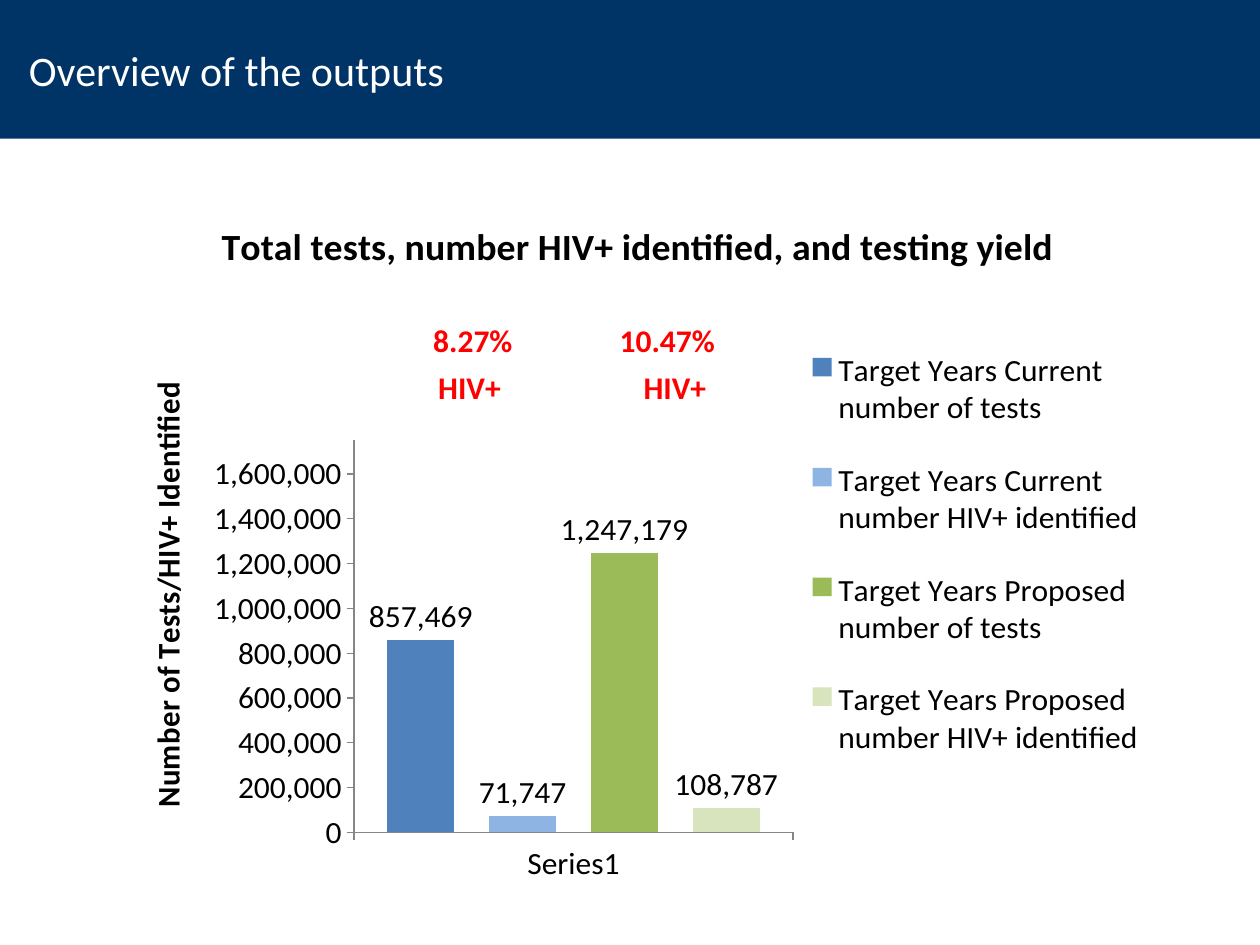
"""Build the slide that compares HIV tests, cases found and testing yield."""
from dataclasses import dataclass

from lxml import etree
from pptx import Presentation
from pptx.chart.data import CategoryChartData
from pptx.dml.color import RGBColor
from pptx.enum.chart import XL_CHART_TYPE, XL_LABEL_POSITION, XL_LEGEND_POSITION, XL_TICK_MARK
from pptx.enum.text import MSO_ANCHOR, MSO_AUTO_SIZE, PP_ALIGN
from pptx.util import Inches, Pt

COLUMN = XL_CHART_TYPE.COLUMN_CLUSTERED
ABOVE = XL_LABEL_POSITION.OUTSIDE_END
RIGHT = XL_LEGEND_POSITION.RIGHT
OUT, NONE = XL_TICK_MARK.OUTSIDE, XL_TICK_MARK.NONE
MIDDLE, LEFT, FIXED = MSO_ANCHOR.MIDDLE, PP_ALIGN.LEFT, MSO_AUTO_SIZE.NONE

HEAD = "Overview of the outputs"
TITLE = "Total tests, number HIV+ identified, and testing yield"
AXIS = "Number of Tests/HIV+ Identified"
GROUP = "Series1"
SERIES = [
    ("Target Years Current number of tests", 857469, "4F81BD"),
    ("Target Years Current number HIV+ identified", 71747, "8EB4E3"),
    ("Target Years Proposed number of tests", 1247179, "9BBB59"),
    ("Target Years Proposed number HIV+ identified", 108787, "D7E4BD"),
]
YIELDS = [("8.27%", 3.34, 0.97, 3.38), ("10.47%", 4.82, 1.37, 5.01)]
ROWS = (2.5, 2.87)
WIDE, HIGH, BAND = 10, 7.5, 1.1
CHART = (0.77, 1.42, 8.5, 5.58)
PLOT = {"x": 0.24, "y": 0.38, "w": 0.41, "h": 0.57}
KEY = {"x": 0.66, "y": 0.2, "w": 0.32, "h": 0.69}
NUMBER = "#,##0"


@dataclass(frozen=True)
class Theme:
    font: str = "Calibri"
    band: str = "003366"
    light: str = "FFFFFF"
    ink: str = "000000"
    alert: str = "FF0000"
    line: str = "868686"
    head: float = 24
    title: float = 21.6
    body: float = 18


LOOK = Theme()


def style(font, size=LOOK.body, color=LOOK.ink, bold=False):
    font.name, font.size, font.bold = LOOK.font, Pt(size), bold
    font.color.rgb = RGBColor.from_string(color)


def write(frame, text, align=None, **form):
    frame.text = text
    para = frame.paragraphs[0]
    para.alignment = align
    style(para.runs[0].font, **form)


def paint(fill, color):
    fill.solid()
    fill.fore_color.rgb = RGBColor.from_string(color)


def place(node, inner=False, **box):
    space = "{%s}" % etree.QName(node).namespace
    for old in node.findall(space + "layout"):
        node.remove(old)
    layout = etree.Element(space + "layout")
    over = node.find(space + "overlay")
    node.insert(0 if over is None else node.index(over), layout)
    manual = etree.SubElement(layout, space + "manualLayout")
    parts = [("layoutTarget", "inner")] if inner else []
    parts += [("xMode", "edge"), ("yMode", "edge")] + list(box.items())
    for tag, val in parts:
        etree.SubElement(manual, space + tag, val=str(val))


def add_head(slide):
    head = slide.shapes.title
    head.left, head.top, head.width, head.height = 0, 0, Inches(WIDE), Inches(BAND)
    paint(head.fill, LOOK.band)
    frame = head.text_frame
    frame.auto_size, frame.vertical_anchor = FIXED, MIDDLE
    frame.margin_left = Inches(0.23)
    write(frame, HEAD, align=LEFT, size=LOOK.head, color=LOOK.light)


def add_bars(slide):
    data = CategoryChartData(number_format=NUMBER)
    data.categories = [GROUP]
    for name, val, _ in SERIES:
        data.add_series(name, [val])
    chart = slide.shapes.add_chart(COLUMN, *map(Inches, CHART), data).chart
    style(chart.font)

    chart.has_title = True
    write(chart.chart_title.text_frame, TITLE, size=LOOK.title, bold=True)
    place(chart.chart_title._element, x=0.11, y=0.05)

    chart.has_legend = True
    key = chart.legend
    key.position, key.include_in_layout = RIGHT, False
    style(key.font)
    place(key._element, **KEY)

    plot = chart.plots[0]
    plot.gap_width, plot.overlap, plot.vary_by_categories = 98, -51, False
    place(plot._element.getparent(), inner=True, **PLOT)
    for bar, (_, _, color) in zip(plot.series, SERIES):
        paint(bar.format.fill, color)
        bar.invert_if_negative = False
        tags = bar.data_labels
        tags.show_value, tags.position = True, ABOVE
        tags.number_format, tags.number_format_is_linked = NUMBER, False
        style(tags.font)

    rise = chart.value_axis
    rise.minimum_scale, rise.maximum_scale, rise.major_unit = 0, 1750000, 200000
    rise.has_major_gridlines = False
    rise.has_title = True
    write(rise.axis_title.text_frame, AXIS, bold=True)
    place(rise.axis_title._element, x=0.04, y=0.3)
    rise.tick_labels.number_format = NUMBER
    rise.tick_labels.number_format_is_linked = False
    for axis in (rise, chart.category_axis):
        axis.major_tick_mark, axis.minor_tick_mark = OUT, NONE
        axis.format.line.color.rgb = RGBColor.from_string(LOOK.line)
        axis.format.line.width = Pt(0.75)
        style(axis.tick_labels.font)


def add_note(slide, text, left, top, width, wrap):
    box = slide.shapes.add_textbox(*map(Inches, (left, top, width, 0.4)))
    box.text_frame.word_wrap = wrap
    write(box.text_frame, text, color=LOOK.alert, bold=True)


def main():
    deck = Presentation()
    deck.slide_width, deck.slide_height = Inches(WIDE), Inches(HIGH)
    slide = deck.slides.add_slide(deck.slide_layouts[5])
    add_head(slide)
    add_bars(slide)
    for share, left, width, inset in YIELDS:
        add_note(slide, share, left, ROWS[0], width, True)
        add_note(slide, "HIV+", inset, ROWS[1], 0.7, False)
    deck.save("out.pptx")


if __name__ == "__main__":
    main()
